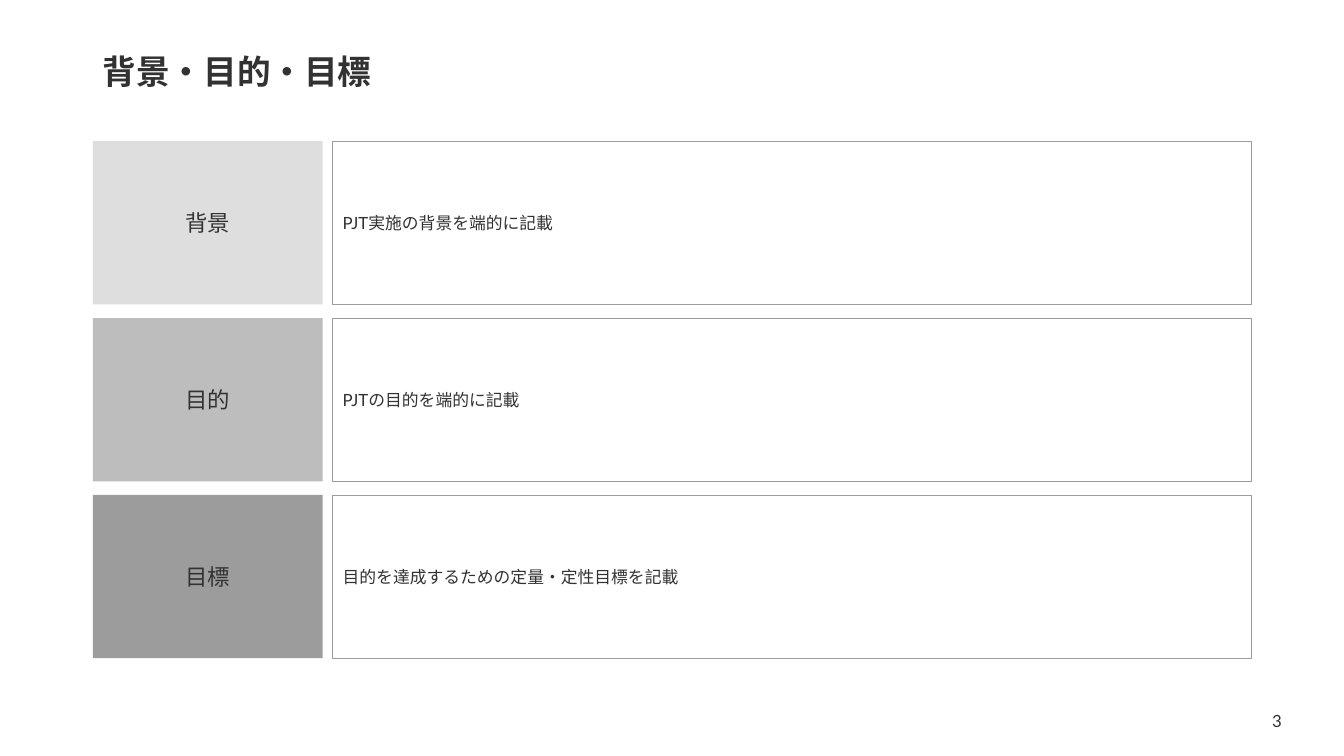
from lxml.etree import SubElement
from pptx import Presentation
from pptx.dml.color import RGBColor
from pptx.enum.shapes import MSO_SHAPE
from pptx.enum.text import MSO_ANCHOR, PP_ALIGN
from pptx.oxml.ns import qn
from pptx.util import Inches, Pt

FONT = "Lato"
COLORS = {
    "text": "323232",
    "border": "9C9C9C",
    "light": "DEDEDE",
    "medium": "BDBDBD",
    "dark": "9C9C9C",
}
ROWS = [
    ("背景", "light", "PJT実施の背景を端的に記載"),
    ("目的", "medium", "PJTの目的を端的に記載"),
    ("目標", "dark", "目的を達成するための定量・定性目標を記載"),
]
LEFT, TOP, PITCH, ROW_HEIGHT = 0.92, 1.4, 1.755, 1.62
LABEL_WIDTH, BODY_LEFT, BODY_WIDTH = 2.28, 3.3, 9.11


def rgb(name):
    return RGBColor.from_string(COLORS[name])


def write(sp, text, size, align=PP_ALIGN.LEFT, bold=False):
    tf = sp.text_frame
    tf.word_wrap = True
    tf.vertical_anchor = MSO_ANCHOR.MIDDLE
    p = tf.paragraphs[0]
    p.text = text
    p.alignment = align
    p.font.size = Pt(size)
    p.font.bold = bold
    p.font.color.rgb = rgb("text")
    p.font.name = FONT
    SubElement(p.font._element, qn("a:ea"), typeface=FONT)
    return p


def add_text(s, box, text, size, **style):
    sp = s.shapes.add_textbox(*map(Inches, box))
    return write(sp, text, size, **style)


def add_box(s, box, text, size, fill=None, border=None, **style):
    sp = s.shapes.add_shape(MSO_SHAPE.RECTANGLE, *map(Inches, box))
    sp.shadow.inherit = False
    if fill:
        sp.fill.solid()
        sp.fill.fore_color.rgb = rgb(fill)
    else:
        sp.fill.background()
    if border:
        sp.line.color.rgb = rgb(border)
        sp.line.width = Pt(0.5)
    else:
        sp.line.fill.background()
    write(sp, text, size, **style)


def main():
    prs = Presentation()
    prs.slide_width, prs.slide_height = Inches(13.33), Inches(7.5)
    s = prs.slides.add_slide(prs.slide_layouts[6])

    title = add_text(s, (LEFT, 0.4, 11.5, 0.67), "背景・目的・目標", 24, bold=True)
    title.line_spacing = 0.9
    add_text(s, (12.42, 6.95, 0.49, 0.4), "3", 12, align=PP_ALIGN.CENTER)

    for i, (label, shade, body) in enumerate(ROWS):
        top = TOP + i * PITCH
        add_box(s, (LEFT, top, LABEL_WIDTH, ROW_HEIGHT), label, 16,
                fill=shade, align=PP_ALIGN.CENTER)
        add_box(s, (BODY_LEFT, top, BODY_WIDTH, ROW_HEIGHT), body, 12,
                border="border")

    prs.save("out.pptx")


if __name__ == "__main__":
    main()
